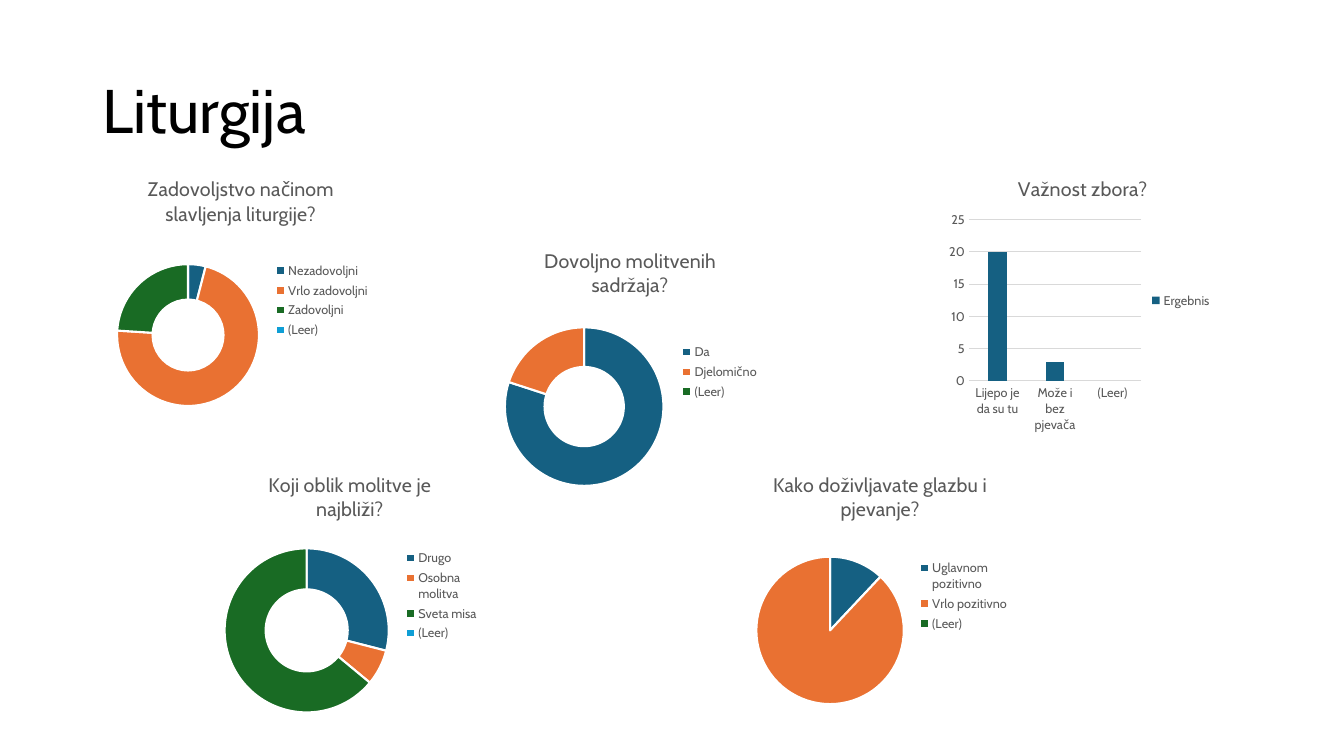
from pptx import Presentation
from pptx.chart.data import CategoryChartData
from pptx.dml.color import RGBColor
from pptx.enum.chart import XL_CHART_TYPE as Kind
from pptx.enum.chart import XL_LEGEND_POSITION as LegendPos
from pptx.enum.chart import XL_TICK_MARK as Tick
from pptx.enum.text import MSO_ANCHOR as Anchor
from pptx.enum.text import PP_ALIGN as Align
from pptx.oxml import parse_xml
from pptx.oxml.ns import nsdecls
from pptx.util import Inches, Pt

COLORS = {
    "title": "000000",
    "label": "595959",
    "grid": "D9D9D9",
    "border": "FFFFFF",
    "blue": "156082",
    "orange": "E97132",
    "green": "196B24",
    "sky": "0F9ED5",
}
SLICES = ["blue", "orange", "green", "sky"]
FONT = "Cabin"
CELL = Inches(1)  # side of one square of the slide grid
CHART_SIDE = 2.76

# question, column, row, answers, plot area (x, y, side) as shares of the chart
DOUGHNUTS = [
    ("Zadovoljstvo načinom slavljenja liturgije?", 1.01, 1.6,
     {"Nezadovoljni": 4, "Vrlo zadovoljni": 72, "Zadovoljni": 24, "(Leer)": None},
     (0.055, 0.37, 0.51)),
    ("Koji oblik molitve je najbliži?", 2.09, 4.53,
     {"Drugo": 29, "Osobna molitva": 7, "Sveta misa": 64, "(Leer)": None},
     (0.05, 0.33, 0.59)),
    ("Dovoljno molitvenih sadržaja?", 4.87, 2.31,
     {"Da": 80, "Djelomično": 20, "(Leer)": None},
     (0.05, 0.34, 0.57)),
]
MUSIC = ("Kako doživljavate glazbu i pjevanje?", 7.35, 4.53,
         {"Uglavnom pozitivno": 12, "Vrlo pozitivno": 88, "(Leer)": None},
         (0.055, 0.36, 0.53))
CHOIR = ("Važnost zbora?", 9.36, 1.6,
         {"Lijepo je da su tu": 20, "Može i bez pjevača": 3, "(Leer)": None})


def rgb(name):
    return RGBColor.from_string(COLORS[name])


def style_font(font, size, color="label"):
    font.name = FONT
    font.size = Pt(size)
    font.bold = False
    font.color.rgb = rgb(color)


def write(tf, text, size, color="label", align=Align.CENTER, spacing=None):
    p = tf.paragraphs[0]
    p.alignment = align
    p.line_spacing = spacing
    r = p.add_run()
    r.text = text
    style_font(r.font, size, color)


def add_title(slide, text):
    sp = slide.shapes.title
    sp.left, sp.top = int(0.92 * CELL), int(0.4 * CELL)
    sp.width, sp.height = int(11.5 * CELL), int(1.45 * CELL)
    sp.text_frame.vertical_anchor = Anchor.MIDDLE
    write(sp.text_frame, text, 44, color="title", align=Align.LEFT, spacing=0.9)


def place_plot(chart, x, y, w, h):
    """Fix the inner plot area, in shares of the chart's size."""
    area = chart._chartSpace.chart.plotArea
    for old in area.xpath("c:layout"):
        area.remove(old)
    sizes = "".join(f'<c:{tag} val="{share}"/>'
                    for tag, share in zip("xywh", (x, y, w, h)))
    area.insert(0, parse_xml(
        f'<c:layout {nsdecls("c")}><c:manualLayout><c:layoutTarget val="inner"/>'
        f'<c:xMode val="edge"/><c:yMode val="edge"/>{sizes}'
        '</c:manualLayout></c:layout>'))


def add_chart(slide, kind, question, col, row, answers, series="Series 1"):
    data = CategoryChartData()
    data.categories = list(answers)
    data.add_series(series, list(answers.values()))
    side = int(CHART_SIDE * CELL)
    chart = slide.shapes.add_chart(
        kind, int(col * CELL), int(row * CELL), side, side, data).chart
    style_font(chart.font, 10, "title")
    chart.has_title = True
    write(chart.chart_title.text_frame, question, 14)
    chart.chart_title.include_in_layout = False
    chart.has_legend = True
    chart.legend.position = LegendPos.RIGHT
    chart.legend.include_in_layout = False
    style_font(chart.legend.font, 9)
    return chart


def add_round_chart(slide, kind, question, col, row, answers, plot_area):
    chart = add_chart(slide, kind, question, col, row, answers)
    x, y, side = plot_area
    place_plot(chart, x, y, side, side)
    plot = chart.plots[0]
    plot.vary_by_categories = True
    for i, color in enumerate(SLICES[:len(answers)]):
        fmt = plot.series[0].points[i].format
        fmt.fill.solid()
        fmt.fill.fore_color.rgb = rgb(color)
        fmt.line.color.rgb = rgb("border")
        fmt.line.width = Pt(1.5)
    for hole in chart._chartSpace.xpath(".//c:holeSize"):
        hole.set("val", "75")


def add_column_chart(slide, question, col, row, answers):
    chart = add_chart(slide, Kind.COLUMN_CLUSTERED, question, col, row, answers,
                      series="Ergebnis")
    place_plot(chart, 0.09, 0.21, 0.62, 0.58)
    plot = chart.plots[0]
    plot.vary_by_categories = False
    plot.gap_width, plot.overlap = 219, -27
    fill = plot.series[0].format.fill
    fill.solid()
    fill.fore_color.rgb = rgb("blue")

    cats, vals = chart.category_axis, chart.value_axis
    for axis in (cats, vals):
        axis.major_tick_mark = axis.minor_tick_mark = Tick.NONE
        style_font(axis.tick_labels.font, 9)
    vals.minimum_scale, vals.maximum_scale, vals.major_unit = 0, 25, 5
    vals.format.line.fill.background()
    for line in (cats.format.line, vals.major_gridlines.format.line):
        line.color.rgb = rgb("grid")
        line.width = Pt(0.75)


def main():
    prs = Presentation()
    prs.slide_width, prs.slide_height = Inches(13.33), Inches(7.5)
    slide = prs.slides.add_slide(prs.slide_layouts[5])
    add_title(slide, "Liturgija")
    for doughnut in DOUGHNUTS:
        add_round_chart(slide, Kind.DOUGHNUT, *doughnut)
    add_round_chart(slide, Kind.PIE, *MUSIC)
    add_column_chart(slide, *CHOIR)
    prs.save("out.pptx")


if __name__ == "__main__":
    main()
